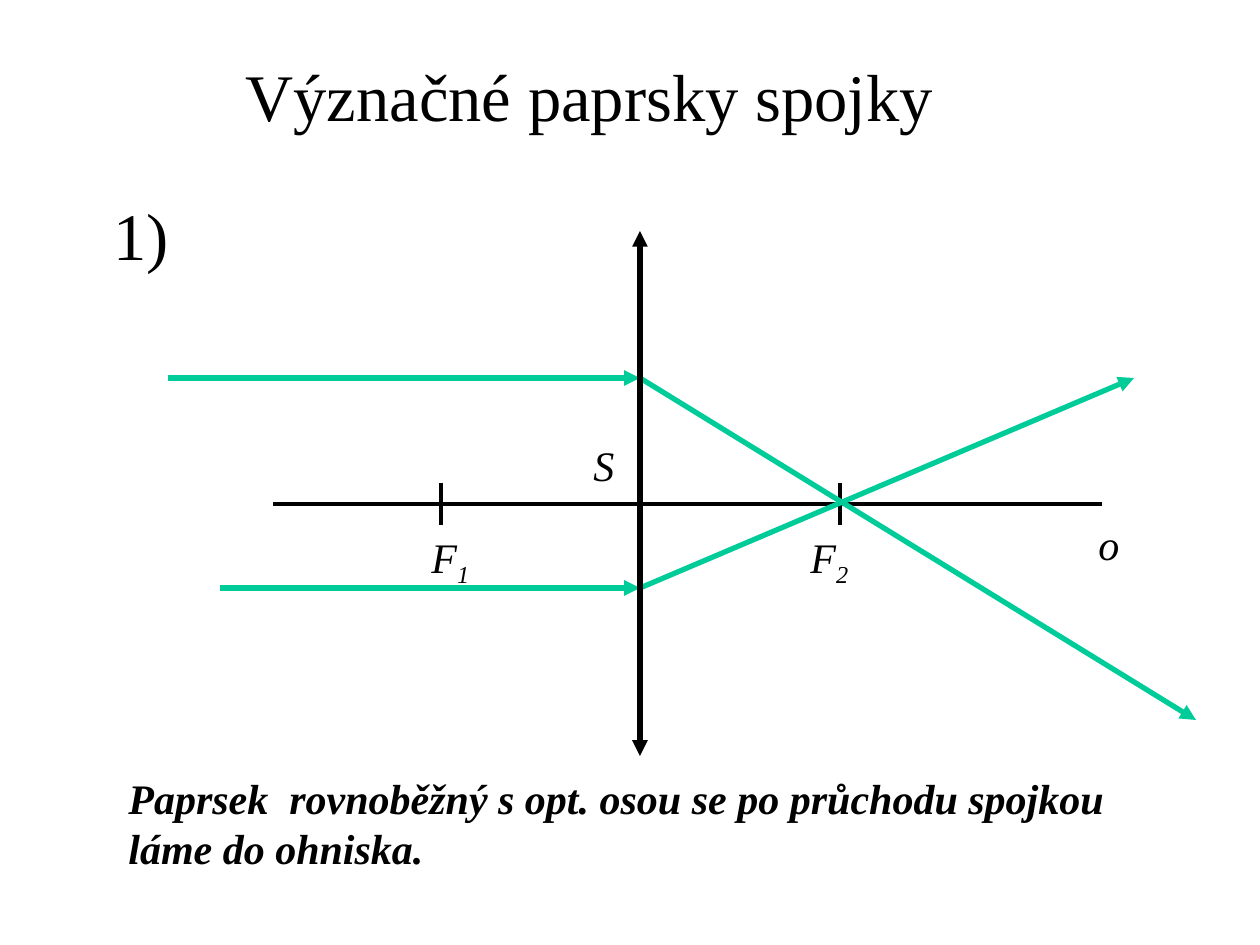
from dataclasses import dataclass

from lxml import etree
from pptx import Presentation
from pptx.dml.color import RGBColor
from pptx.enum.shapes import MSO_CONNECTOR
from pptx.enum.text import MSO_ANCHOR, MSO_AUTO_SIZE, PP_ALIGN
from pptx.oxml.ns import qn
from pptx.util import Pt

LINE = MSO_CONNECTOR.STRAIGHT
LEFT, CENTER = PP_ALIGN.LEFT, PP_ALIGN.CENTER
TOP, MIDDLE = MSO_ANCHOR.TOP, MSO_ANCHOR.MIDDLE
FIXED = MSO_AUTO_SIZE.NONE
SCALE = 914400 / 126


@dataclass(frozen=True)
class Theme:
    font: str = "Times New Roman"
    ink: RGBColor = RGBColor(0x00, 0x00, 0x00)
    ray: RGBColor = RGBColor(0x00, 0xCC, 0x99)
    head: Pt = Pt(38)
    text: Pt = Pt(24)
    thin: Pt = Pt(2.25)
    bold: Pt = Pt(3)


def emu(*px):
    return [round(n * SCALE) for n in px]


class Sketch:
    def __init__(self, slide, theme):
        self.slide, self.theme = slide, theme

    def style(self, run, **extra):
        look = {"name": self.theme.font, "size": self.theme.text, **extra}
        for key, value in look.items():
            setattr(run.font, key, value)
        run.font.color.rgb = self.theme.ink

    def fill(self, shape, lines, align=LEFT, anchor=TOP, wrap=True, **look):
        """Write lines of text; return the last paragraph."""
        frame = shape.text_frame
        form = {"word_wrap": wrap, "auto_size": FIXED, "vertical_anchor": anchor}
        for key, value in form.items():
            setattr(frame, key, value)
        for i, line in enumerate(lines):
            para = frame.add_paragraph() if i else frame.paragraphs[0]
            para.alignment = align
            run = para.add_run()
            run.text = line
            self.style(run, **look)
        return para

    def title(self, box, text):
        shape = self.slide.shapes.title
        shape.left, shape.top, shape.width, shape.height = emu(*box)
        self.fill(shape, [text], CENTER, MIDDLE, size=self.theme.head)

    def text(self, box, *lines, **look):
        shape = self.slide.shapes.add_textbox(*emu(*box))
        return self.fill(shape, lines, **look)

    def label(self, box, text, sub=""):
        para = self.text(box, text, italic=True)
        if sub:
            run = para.add_run()
            run.text = sub
            self.style(run, italic=True)
            run._r.get_or_add_rPr().set("baseline", "-25000")

    def line(self, start, end, color, width, *tips):
        """Draw a straight line; tips are headEnd and/or tailEnd."""
        link = self.slide.shapes.add_connector(LINE, *emu(*start, *end))
        link.line.color.rgb = color
        link.line.width = width
        for tip in tips:
            etree.SubElement(link.line._ln, qn("a:" + tip), type="triangle")
        etree.SubElement(link._element.spPr, qn("a:effectLst"))

    def ray(self, start, end):
        self.line(start, end, self.theme.ray, self.theme.bold, "tailEnd")


def main():
    deck = Presentation()
    deck.slide_width, deck.slide_height = emu(1260, 945)
    slide = deck.slides.add_slide(deck.slide_layouts[5])
    theme = Theme()
    art = Sketch(slide, theme)

    lens, axis = 640, 504
    art.title((54, 16, 1071, 158), "Význačné paprsky spojky")
    art.line((273, axis), (1102, axis), theme.ink, theme.thin)
    art.text((116, 766, 1040, 113),
             "Paprsek  rovnoběžný s opt. osou se po průchodu spojkou",
             "láme do ohniska.", wrap=False, bold=True, italic=True)

    for focus in (441, 840):
        art.line((focus, axis - 21), (focus, axis + 21), theme.ink, theme.thin)
    for start, y, end in ((168, 378, (1196, 720)), (220, 588, (1134, 378))):
        art.ray((start, y), (lens, y))
        art.ray((lens, y), end)
    art.line((lens, 231), (lens, 756), theme.ink, theme.bold,
             "headEnd", "tailEnd")

    art.label((419, 525, 102, 64), "F", "1")
    art.label((798, 525, 90, 64), "F", "2")
    art.label((1086, 512, 49, 60), "o")
    art.label((581, 433, 42, 63), "S")
    art.text((84, 155, 115, 158), "1)", align=CENTER, anchor=MIDDLE,
             size=theme.head)
    deck.save("out.pptx")


if __name__ == "__main__":
    main()
